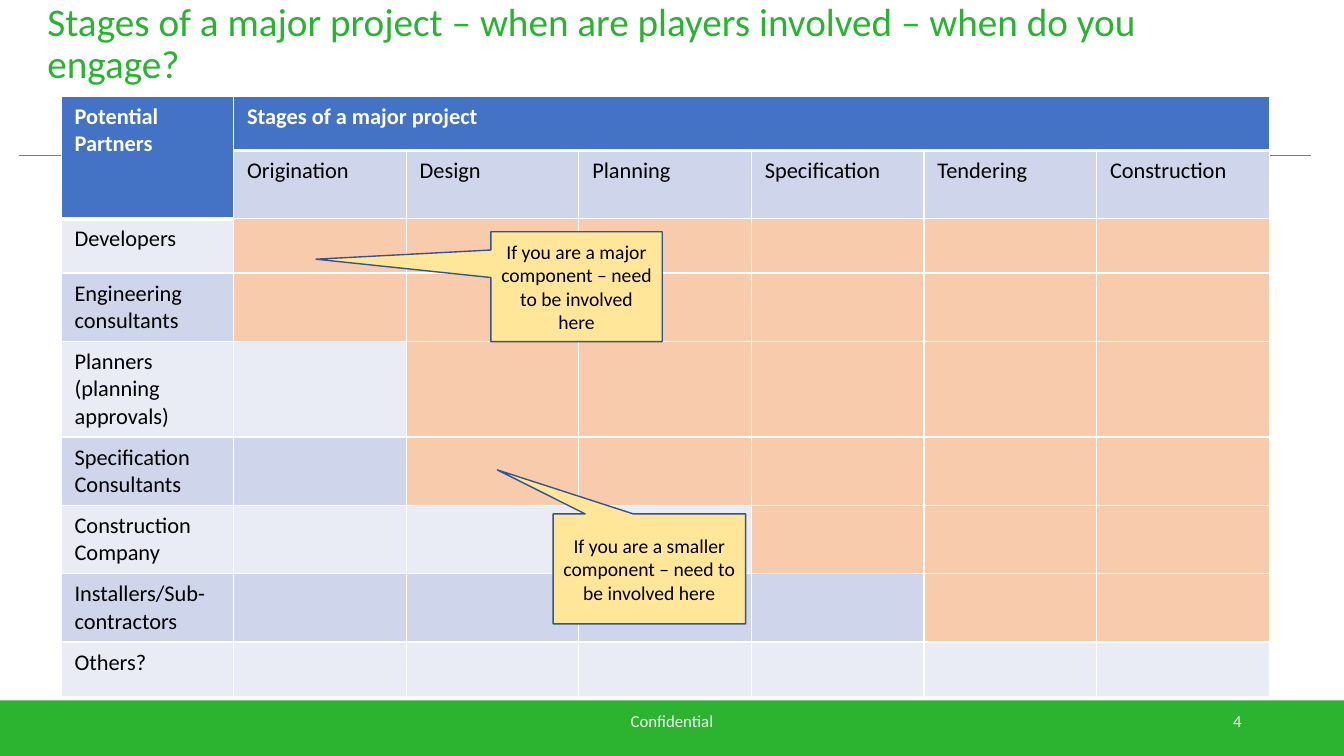
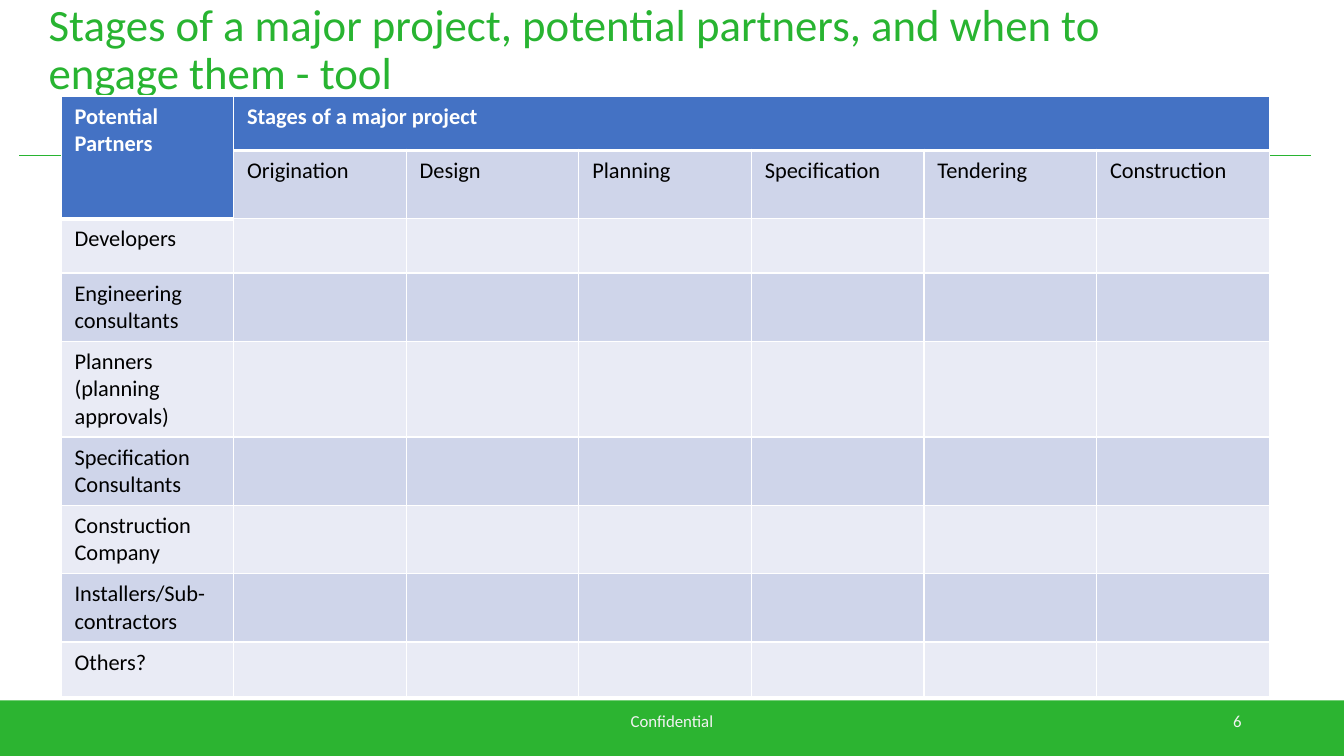
from dataclasses import dataclass

from lxml.etree import SubElement
from pptx import Presentation
from pptx.dml.color import RGBColor
from pptx.enum.shapes import MSO_CONNECTOR, MSO_SHAPE
from pptx.enum.text import MSO_ANCHOR, MSO_AUTO_SIZE, PP_ALIGN
from pptx.oxml.ns import qn
from pptx.slide import Slide
from pptx.table import _Cell
from pptx.util import Cm, Pt

# Shared look
FONT = "Calibri"
BAND_GREEN = RGBColor(0x2C, 0xB4, 0x31)
TITLE_GREEN = RGBColor(0x28, 0xB4, 0x31)
HEADER_BLUE = RGBColor(0x44, 0x72, 0xC4)
DARK_ROW = RGBColor(0xCF, 0xD5, 0xEA)
LIGHT_ROW = RGBColor(0xE9, 0xEB, 0xF5)
INVOLVED = RGBColor(0xF8, 0xCB, 0xAD)
CALLOUT_FILL = RGBColor(0xFF, 0xE6, 0x99)
CALLOUT_LINE = RGBColor(0x32, 0x54, 0x91)
FOOTER_GREY = RGBColor(0xF2, 0xF2, 0xF2)
BLACK = RGBColor(0, 0, 0)
WHITE = RGBColor(0xFF, 0xFF, 0xFF)

SLIDE_WIDTH, SLIDE_HEIGHT = Cm(33.87), Cm(19.05)
FOOTER_TOP = Cm(17.65)
COLUMN_WIDTH = Cm(4.35)
HEADER_HEIGHT = Cm(1.37)
HEADER_ROWS = 2


@dataclass(frozen=True)
class Partner:
    name: str
    row_height: float
    first_stage: int  # index of the stage where the partner joins


@dataclass(frozen=True)
class Callout:
    text: str
    left: float
    top: float
    width: float
    tip: tuple[float, float]


@dataclass(frozen=True)
class StagePage:
    title: str
    title_size: int
    title_left: float
    title_top: float
    number: int
    show_involvement: bool = False
    callouts: tuple[Callout, ...] = ()


STAGES = ("Origination", "Design", "Planning", "Specification", "Tendering", "Construction")
PARTNERS = (
    Partner("Developers", 1.37, 0),
    Partner("Engineering consultants", 1.7, 0),
    Partner("Planners (planning approvals)", 2.36, 1),
    Partner("Specification Consultants", 1.7, 1),
    Partner("Construction Company", 1.7, 3),
    Partner("Installers/Sub-contractors", 1.7, 4),
    Partner("Others?", 1.37, len(STAGES)),
)
PAGES = (
    StagePage(
        "Stages of a major project – when are players involved – when do you engage?",
        28, 0.94, -0.71, 4, True,
        (
            Callout("If you are a major component – need to be involved here",
                    12.37, 5.84, 4.32, (-1.52, -0.25)),
            Callout("If you are a smaller component – need to be involved here",
                    13.94, 12.95, 4.85, (-0.79, -0.9)),
        ),
    ),
    StagePage(
        "Stages of a major project, potential partners, and when to engage them - tool",
        32, 0.97, -0.56, 6,
    ),
)


def write(frame, text: str, size: int, color: RGBColor,
          align: PP_ALIGN = PP_ALIGN.LEFT, bold: bool = False) -> None:
    """Fill a text frame with one formatted paragraph."""
    frame.word_wrap = True
    para = frame.paragraphs[0]
    para.text = text
    para.alignment = align
    para.font.name = FONT
    para.font.size = Pt(size)
    para.font.bold = bold
    para.font.color.rgb = color


def add_title(page: Slide, content: StagePage) -> None:
    title = page.shapes.title
    title.left, title.top = Cm(content.title_left), Cm(content.title_top)
    title.width, title.height = Cm(29.21), Cm(3.68)
    frame = title.text_frame
    frame.auto_size = MSO_AUTO_SIZE.NONE
    frame.vertical_anchor = MSO_ANCHOR.MIDDLE
    write(frame, content.title, content.title_size, TITLE_GREEN)
    frame.paragraphs[0].line_spacing = 0.9


def add_frame(page: Slide) -> None:
    """Draw the footer band and the rule behind the table."""
    band = page.shapes.add_shape(
        MSO_SHAPE.RECTANGLE, 0, FOOTER_TOP, SLIDE_WIDTH, SLIDE_HEIGHT - FOOTER_TOP)
    band.shadow.inherit = False
    band.fill.solid()
    band.fill.fore_color.rgb = BAND_GREEN
    band.line.fill.background()

    rule = page.shapes.add_connector(
        MSO_CONNECTOR.STRAIGHT, Cm(0.48), Cm(3.92), Cm(33.04), Cm(3.92))
    rule.line.color.rgb = TITLE_GREEN
    rule.line.width = Pt(0.75)
    SubElement(rule._element.spPr, qn("a:effectLst"))


def add_footer_text(page: Slide, text: str, left: float, width: float, align: PP_ALIGN) -> None:
    box = page.shapes.add_textbox(Cm(left), FOOTER_TOP, Cm(width), Cm(1.01))
    box.text_frame.vertical_anchor = MSO_ANCHOR.MIDDLE
    write(box.text_frame, text, 12, FOOTER_GREY, align)


def set_border(cell: _Cell, side: str, width: float) -> None:
    line = SubElement(cell._tc.get_or_add_tcPr(), qn(f"a:ln{side}"), w=str(Pt(width)))
    fill = SubElement(line, qn("a:solidFill"))
    SubElement(fill, qn("a:srgbClr"), val=str(WHITE))


def is_header(row: int, column: int) -> bool:
    return row == 0 or (row == 1 and column == 0)


def style_cell(cell: _Cell, row: int, column: int, fill: RGBColor) -> None:
    header = is_header(row, column)
    below_header = not header and is_header(row - 1, column)
    for side, width in (("L", 1), ("R", 1), ("T", 3 if below_header else 1),
                        ("B", 3 if header else 1)):
        set_border(cell, side, width)
    cell.fill.solid()
    cell.fill.fore_color.rgb = fill
    cell.margin_left = cell.margin_right = Cm(0.34)
    cell.margin_top = cell.margin_bottom = Cm(0.17)


def cell_fill(row: int, column: int, show_involvement: bool) -> RGBColor:
    if is_header(row, column):
        return HEADER_BLUE
    if show_involvement and row >= HEADER_ROWS and column > 0:
        if column - 1 >= PARTNERS[row - HEADER_ROWS].first_stage:
            return INVOLVED
    return DARK_ROW if row % 2 else LIGHT_ROW


def add_stage_table(page: Slide, show_involvement: bool) -> None:
    heights = [HEADER_HEIGHT] * HEADER_ROWS + [Cm(partner.row_height) for partner in PARTNERS]
    columns = len(STAGES) + 1
    table = page.shapes.add_table(
        len(heights), columns, Cm(1.54), Cm(2.42), COLUMN_WIDTH * columns, sum(heights)).table
    table.first_row = table.horz_banding = False
    for column in table.columns:
        column.width = COLUMN_WIDTH
    for row, height in enumerate(heights):
        table.rows[row].height = height
        for column in range(columns):
            style_cell(table.cell(row, column), row, column,
                       cell_fill(row, column, show_involvement))

    # Headings
    table.cell(0, 0).merge(table.cell(1, 0))
    table.cell(0, 1).merge(table.cell(0, columns - 1))
    for column, heading in enumerate(("Potential Partners", "Stages of a major project")):
        write(table.cell(0, column).text_frame, heading, 16, WHITE, bold=True)

    # Stage and partner names
    for column, stage in enumerate(STAGES, start=1):
        write(table.cell(1, column).text_frame, stage, 16, BLACK)
    for row, partner in enumerate(PARTNERS, start=HEADER_ROWS):
        write(table.cell(row, 0).text_frame, partner.name, 16, BLACK)


def add_callout(page: Slide, callout: Callout) -> None:
    shape = page.shapes.add_shape(
        MSO_SHAPE.RECTANGULAR_CALLOUT, Cm(callout.left), Cm(callout.top),
        Cm(callout.width), Cm(2.77))
    shape.shadow.inherit = False
    shape.adjustments[0], shape.adjustments[1] = callout.tip
    shape.fill.solid()
    shape.fill.fore_color.rgb = CALLOUT_FILL
    shape.line.color.rgb = CALLOUT_LINE
    shape.line.width = Pt(1)
    shape.text_frame.vertical_anchor = MSO_ANCHOR.MIDDLE
    write(shape.text_frame, callout.text, 14, BLACK, PP_ALIGN.CENTER)


def main() -> None:
    deck = Presentation()
    deck.slide_width, deck.slide_height = SLIDE_WIDTH, SLIDE_HEIGHT
    title_only = deck.slide_layouts[5]
    for content in PAGES:
        page = deck.slides.add_slide(title_only)
        add_frame(page)
        add_title(page, content)
        add_stage_table(page, content.show_involvement)
        add_footer_text(page, "Confidential", 11.22, 11.43, PP_ALIGN.CENTER)
        add_footer_text(page, str(content.number), 23.92, 7.62, PP_ALIGN.RIGHT)
        for callout in content.callouts:
            add_callout(page, callout)
    deck.save("out.pptx")


if __name__ == "__main__":
    main()
